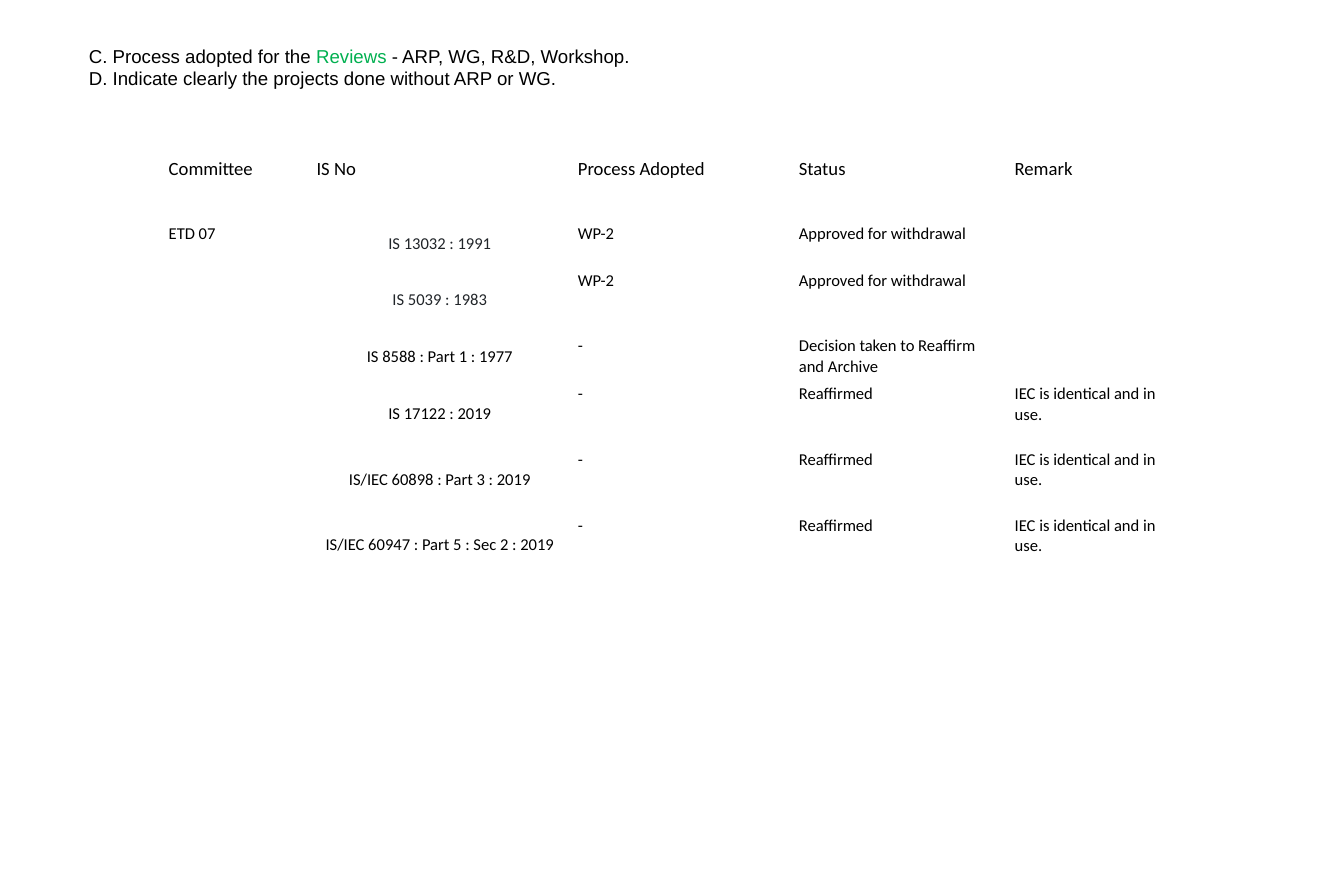
from dataclasses import dataclass

from pptx import Presentation
from pptx.dml.color import RGBColor
from pptx.enum.text import MSO_ANCHOR, PP_ALIGN
from pptx.util import Inches, Pt


@dataclass(frozen=True)
class Theme:
    """Colours, fonts and type sizes of the slide."""
    black: RGBColor = RGBColor(0x00, 0x00, 0x00)
    charcoal: RGBColor = RGBColor(0x21, 0x25, 0x29)
    green: RGBColor = RGBColor(0x00, 0xB0, 0x50)
    heading_font: str = "Arial"
    table_font: str = "Calibri"
    heading_size: int = 18
    body_size: int = 16


HEADING = [
    [("C. Process adopted for the ", "black"), ("Reviews ", "green"),
     ("- ARP, WG, R&D, Workshop.", "black")],
    [("D. Indicate clearly the projects done without ARP or WG.", "black")],
]
HEADERS = ["Committee", "IS No", "Process Adopted", "Status", "Remark"]
WITHDRAWN = ["WP-2", "Approved for withdrawal", ""]
REAFFIRMED = ["-", "Reaffirmed", "IEC is identical and in use."]
STANDARDS = [
    ["ETD 07", "IS 13032 : 1991", *WITHDRAWN],
    ["", "IS 5039 : 1983", *WITHDRAWN],
    ["", "IS 8588 : Part 1 : 1977", "-", "Decision taken to Reaffirm and Archive", ""],
    ["", "IS 17122 : 2019", *REAFFIRMED],
    ["", "IS/IEC 60898 : Part 3 : 2019", *REAFFIRMED],
    ["", "IS/IEC 60947 : Part 5 : Sec 2 : 2019", *REAFFIRMED],
]
COLUMN_WIDTHS = [1.98, 3.5, 2.96, 2.89, 2.36]
ROW_HEIGHTS = [0.89, 0.62, 0.88, 0.62, 0.88, 0.88, 0.88]
NUMBER_COLUMN = 1


class SlideBuilder:
    """Places styled elements on a grid of 18 columns and 12 rows."""

    columns, rows = 18, 12

    def __init__(self, presentation, theme):
        """Set the slide size and add a title-only slide."""
        presentation.slide_width, presentation.slide_height = Inches(18), Inches(12)
        self.column = presentation.slide_width / self.columns
        self.row = presentation.slide_height / self.rows
        self.theme = theme
        self.slide = presentation.slides.add_slide(presentation.slide_layouts[5])

    def box(self, left, top, width, height):
        """Turn grid columns and rows into slide lengths."""
        return (round(left * self.column), round(top * self.row),
                round(width * self.column), round(height * self.row))

    def style(self, paragraph, font, size, color, alignment=PP_ALIGN.LEFT):
        """Set the font and alignment of a paragraph."""
        paragraph.alignment = alignment
        paragraph.font.name = font
        paragraph.font.size = Pt(size)
        paragraph.font.color.rgb = color

    def heading(self, lines, *place):
        """Fill the title placeholder with lines of coloured runs."""
        shape = self.slide.shapes.title
        shape.left, shape.top, shape.width, shape.height = self.box(*place)
        frame = shape.text_frame
        frame.vertical_anchor = MSO_ANCHOR.TOP
        for index, line in enumerate(lines):
            paragraph = frame.add_paragraph() if index else frame.paragraphs[0]
            self.style(paragraph, self.theme.heading_font, self.theme.heading_size,
                       self.theme.black)
            for text, color in line:
                run = paragraph.add_run()
                run.text = text
                run.font.color.rgb = getattr(self.theme, color)

    def table(self, records, widths, heights, left, top):
        """Add an unfilled table with a header row."""
        place = self.box(left, top, sum(widths), sum(heights))
        table = self.slide.shapes.add_table(len(heights), len(widths), *place).table
        table.first_row = table.horz_banding = False
        for column, width in zip(table.columns, widths):
            column.width = round(width * self.column)
        for row, height in zip(table.rows, heights):
            row.height = round(height * self.row)
        for row_index, record in enumerate(records):
            for column_index, text in enumerate(record):
                cell = table.cell(row_index, column_index)
                cell.fill.background()
                cell.text = text
                size = self.theme.body_size if row_index else self.theme.heading_size
                self.style(cell.text_frame.paragraphs[0], self.theme.table_font, size,
                           self.theme.black)
        return table

    def center_numbers(self, table, column_index, charcoal_rows):
        """Centre the standard numbers below the header."""
        for row_index in range(1, len(table.rows)):
            cell = table.cell(row_index, column_index)
            cell.vertical_anchor = MSO_ANCHOR.MIDDLE
            cell.margin_left = cell.margin_right = Inches(0.07)
            cell.margin_top = cell.margin_bottom = 0
            color = self.theme.charcoal if row_index <= charcoal_rows else self.theme.black
            paragraph = cell.text_frame.paragraphs[0]
            self.style(paragraph, self.theme.table_font, self.theme.body_size, color,
                       PP_ALIGN.CENTER)
            paragraph.line_spacing = 1.07


def main():
    """Build and save the review process slide."""
    presentation = Presentation()
    builder = SlideBuilder(presentation, Theme())
    builder.heading(HEADING, 1.09, 0.55, 9, 0.71)
    table = builder.table([HEADERS, *STANDARDS], COLUMN_WIDTHS, ROW_HEIGHTS, 2.16, 2.06)
    builder.center_numbers(table, NUMBER_COLUMN, charcoal_rows=2)
    table.cell(1, 0).merge(table.cell(len(STANDARDS), 0))
    presentation.save("out.pptx")


if __name__ == "__main__":
    main()
